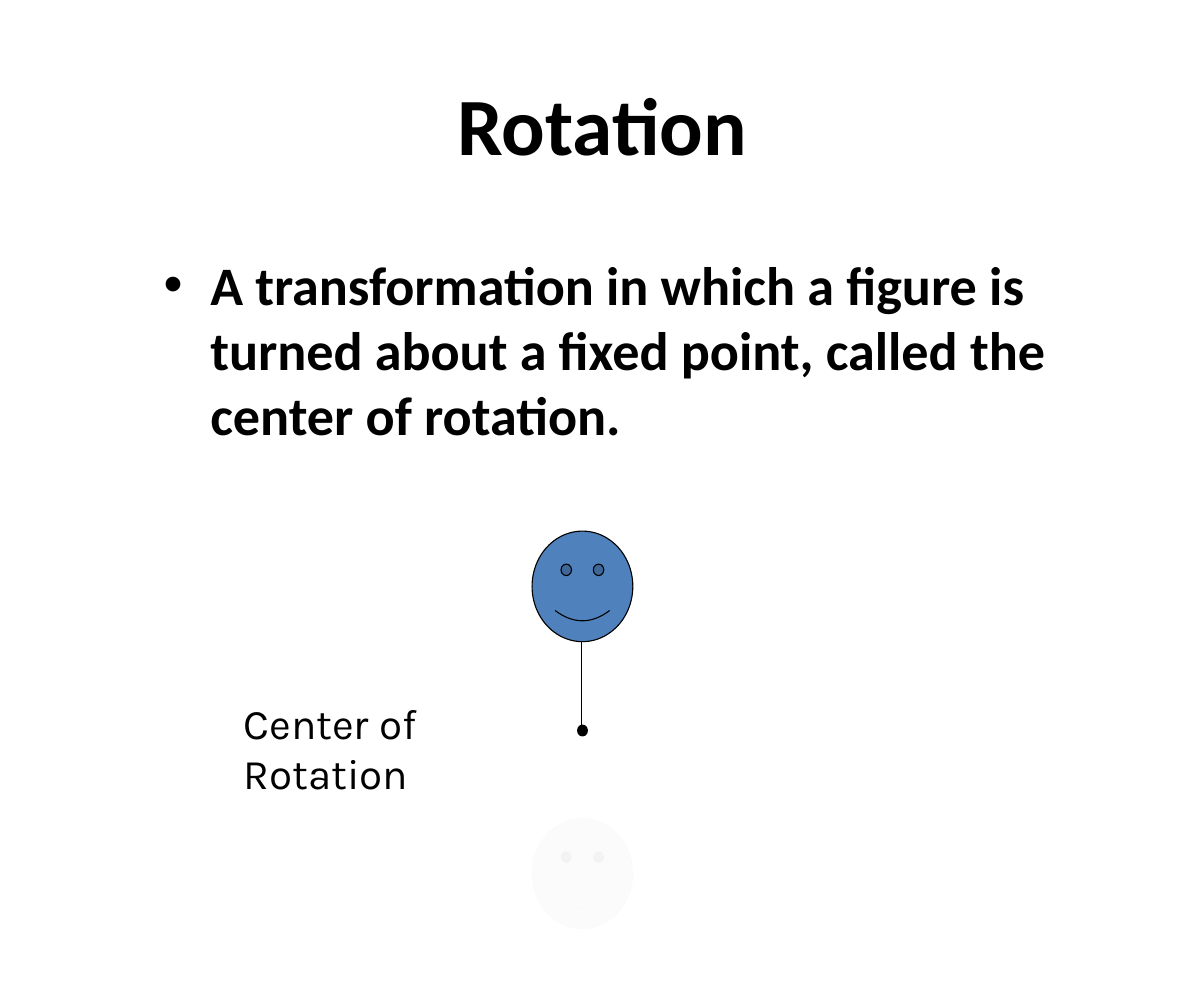
from dataclasses import dataclass

from lxml import etree
from pptx import Presentation
from pptx.dml.color import RGBColor
from pptx.enum.shapes import MSO_CONNECTOR, MSO_SHAPE
from pptx.enum.text import MSO_ANCHOR, PP_ALIGN
from pptx.oxml.ns import qn
from pptx.util import Emu, Pt

PX = 9144  # one hundredth of an inch
COLORS = {
    "black": "000000",
    "blue": "4F81BD",
    "ghost_fill": "DDDDDD",
    "ghost_line": "EAEAEA",
}
SMILEY, DOT = MSO_SHAPE.SMILEY_FACE, MSO_SHAPE.OVAL
STRAIGHT = MSO_CONNECTOR.STRAIGHT
LEFT, CENTER = PP_ALIGN.LEFT, PP_ALIGN.CENTER
TOP, MIDDLE = MSO_ANCHOR.TOP, MSO_ANCHOR.MIDDLE
SMILE = 0.047


@dataclass
class Figure:
    kind: int
    left: int
    top: int
    width: int
    height: int
    fill: str
    line: str
    fill_alpha: int = 100
    line_alpha: int = 100


FACE = Figure(SMILEY, 491, 490, 93, 102, "blue", "black")
GHOST = Figure(SMILEY, 491, 755, 93, 102, "ghost_fill", "ghost_line", 10, 4)
PIVOT = Figure(DOT, 533, 669, 9, 10, "black", "black")


def px(length: int) -> Emu:
    return Emu(length * PX)


def color(name: str) -> RGBColor:
    return RGBColor.from_string(COLORS[name])


def place(box, left: int, top: int, width: int, height: int) -> None:
    box.left, box.top = px(left), px(top)
    box.width, box.height = px(width), px(height)


def write(box, text: str, *, size: int, font: str, bold: bool = False,
          align=LEFT, anchor=TOP) -> None:
    frame = box.text_frame
    frame.word_wrap = True
    frame.vertical_anchor = anchor
    frame.margin_left = frame.margin_right = px(12)
    frame.margin_top = frame.margin_bottom = px(6)
    para = frame.paragraphs[0]
    para.alignment = align
    span = para.add_run()
    span.text = text
    span.font.size = Pt(size)
    span.font.name = font
    span.font.bold = bold
    span.font.color.rgb = color("black")


def add_bullet(box, indent: int) -> None:
    properties = box.text_frame.paragraphs[0]._p.get_or_add_pPr()
    properties.set("marL", str(px(indent)))
    properties.set("indent", str(-px(indent)))
    etree.SubElement(properties, qn("a:buChar")).set("char", "•")


def set_alpha(fill, percent: int) -> None:
    if percent < 100:
        tint = fill._xPr.find(qn("a:solidFill"))[0]
        etree.SubElement(tint, qn("a:alpha")).set("val", str(percent * 1000))


def draw_figure(page, figure: Figure) -> None:
    shape = page.shapes.add_shape(
        figure.kind, px(figure.left), px(figure.top),
        px(figure.width), px(figure.height))
    shape.shadow.inherit = False
    shape.fill.solid()
    shape.fill.fore_color.rgb = color(figure.fill)
    set_alpha(shape.fill, figure.fill_alpha)
    shape.line.width = Pt(0.75)
    shape.line.color.rgb = color(figure.line)
    set_alpha(shape.line.fill, figure.line_alpha)
    if figure.kind == SMILEY:
        shape.adjustments[0] = SMILE


def draw_arm(page, face: Figure, pivot: Figure) -> None:
    middle = face.left + face.width // 2
    arm = page.shapes.add_connector(
        STRAIGHT, px(middle), px(pivot.top + pivot.height // 2),
        px(middle), px(face.top + face.height))
    arm.line.width = Pt(0.75)
    arm.line.color.rgb = color("black")
    etree.SubElement(arm._element.spPr, qn("a:effectLst"))


def main() -> None:
    deck = Presentation()
    deck.slide_width, deck.slide_height = px(1111), px(918)
    page = deck.slides.add_slide(deck.slide_layouts[1])

    # Title and definition
    title, body = page.placeholders
    place(title, 56, 37, 1000, 153)
    write(title, "Rotation", size=54, font="Calibri", bold=True,
          align=CENTER, anchor=MIDDLE)
    place(body, 139, 226, 944, 230)
    write(body, "A transformation in which a figure is turned about a fixed "
          "point, called the center of rotation.",
          size=36, font="Calibri", bold=True)
    add_bullet(body, 43)

    # Face, its faint image and the arm to the pivot
    draw_figure(page, FACE)
    draw_figure(page, GHOST)
    draw_arm(page, FACE, PIVOT)
    draw_figure(page, PIVOT)

    # Pivot label
    label = page.shapes.add_textbox(px(213), px(637), px(324), px(106))
    write(label, "Center of Rotation", size=28, font="Karla")

    deck.save("out.pptx")


if __name__ == "__main__":
    main()
